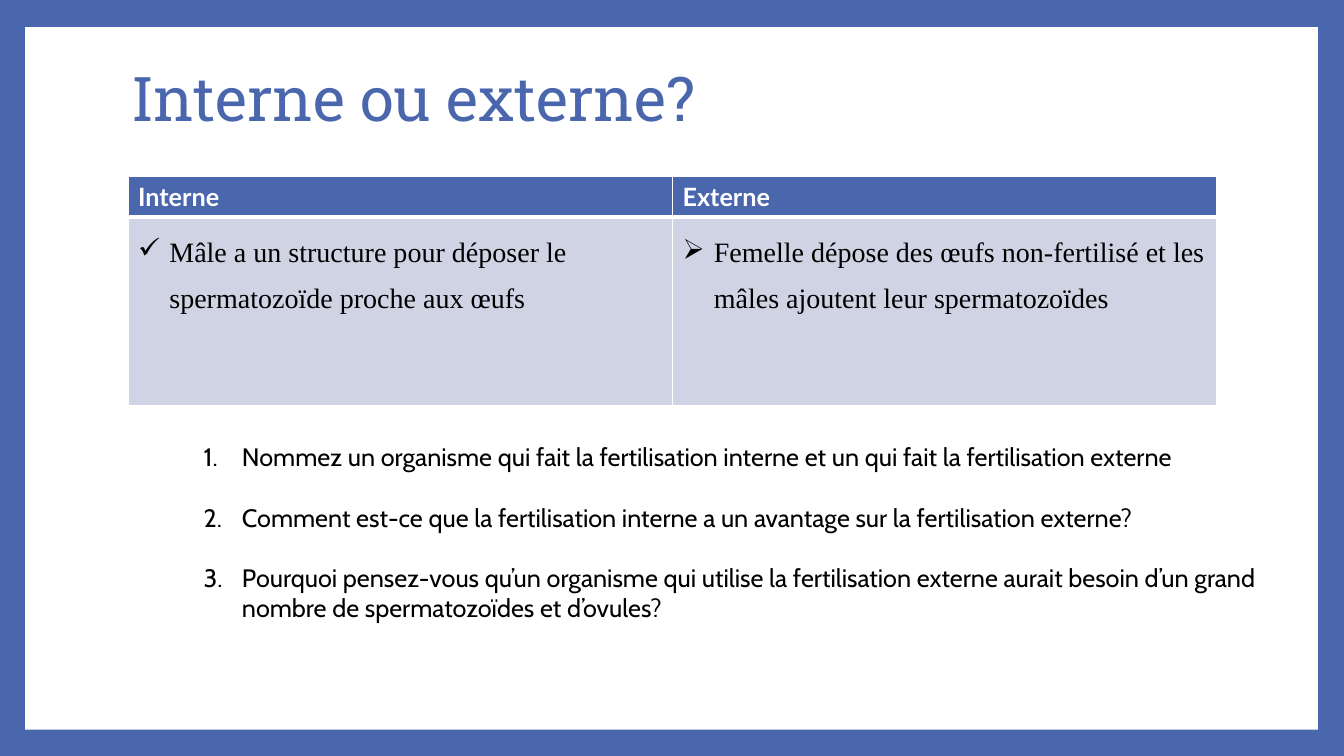
from lxml import etree
from pptx import Presentation
from pptx.dml.color import RGBColor
from pptx.enum.shapes import MSO_SHAPE
from pptx.enum.text import MSO_ANCHOR, MSO_AUTO_SIZE, PP_ALIGN
from pptx.oxml.ns import qn
from pptx.util import Inches, Pt

RECTANGLE = MSO_SHAPE.RECTANGLE
MIDDLE, TOP = MSO_ANCHOR.MIDDLE, MSO_ANCHOR.TOP
NO_AUTOFIT = MSO_AUTO_SIZE.NONE
LEFT = PP_ALIGN.LEFT

COLORS = {"blue": "4A66AC", "pale": "D0D3E3", "white": "FFFFFF", "black": "000000"}

TITLE = "Interne ou externe?"
FERTILISATION = [
    ("Interne", "✓", "Mâle a un structure pour déposer le spermatozoïde proche aux œufs"),
    ("Externe", "➢", "Femelle dépose des œufs non-fertilisé et les mâles ajoutent leur spermatozoïdes"),
]
QUESTIONS = [
    "Nommez un organisme qui fait la fertilisation interne et un qui fait la fertilisation externe",
    "Comment est-ce que la fertilisation interne a un avantage sur la fertilisation externe?",
    "Pourquoi pensez-vous qu’un organisme qui utilise la fertilisation externe aurait besoin "
    "d’un grand nombre de spermatozoïdes et d’ovules?",
]

PANEL_AREA = (0.25, 0.27, 12.82, 6.97)
TITLE_AREA = (1.2, 0.27, 10.8, 1.48)
TABLE_AREA = (1.27, 1.75, 10.8, 2.27)
QUESTIONS_AREA = (1.92, 4.33, 11.15, 1.92)
HEADER_HEIGHT = 0.4


def color(name):
    return RGBColor.from_string(COLORS[name])


def place(shape, area):
    shape.left, shape.top, shape.width, shape.height = map(Inches, area)


def style(para, font_name, size, color_name, bold=False):
    para.alignment = LEFT
    para.font.name = font_name
    para.font.size = Pt(size)
    para.font.bold = bold
    para.font.color.rgb = color(color_name)


def add_bullet(para, indent, tag, **attributes):
    properties = para._p.get_or_add_pPr()
    properties.set("marL", str(Inches(indent)))
    properties.set("indent", str(-Inches(indent)))
    etree.SubElement(properties, qn(tag), **attributes)


def fill_cell(cell, fill_name, bottom_width):
    """Draw white borders round the cell, then fill it."""
    properties = cell._tc.get_or_add_tcPr()
    for side, width in (("L", 1), ("R", 1), ("T", 1), ("B", bottom_width)):
        line = etree.SubElement(properties, qn(f"a:ln{side}"), w=str(Pt(width)))
        fill = etree.SubElement(line, qn("a:solidFill"))
        etree.SubElement(fill, qn("a:srgbClr"), val=COLORS["white"])
    cell.fill.solid()
    cell.fill.fore_color.rgb = color(fill_name)


def add_panel(slide):
    panel = slide.shapes.add_shape(RECTANGLE, *map(Inches, PANEL_AREA))
    panel.shadow.inherit = False
    panel.fill.solid()
    panel.fill.fore_color.rgb = color("white")
    panel.line.fill.background()
    slide.shapes.title.element.addprevious(panel.element)


def add_title(slide):
    title = slide.shapes.title
    place(title, TITLE_AREA)
    frame = title.text_frame
    frame.text = TITLE
    frame.auto_size = NO_AUTOFIT
    frame.vertical_anchor = MIDDLE
    para = frame.paragraphs[0]
    para.line_spacing = 0.9
    style(para, "Roboto Slab", 44, "blue")


def add_comparison(slide):
    frame = slide.shapes.add_table(2, len(FERTILISATION), *map(Inches, TABLE_AREA))
    table = frame.table
    table.horz_banding = False
    table.rows[0].height = Inches(HEADER_HEIGHT)
    table.rows[1].height = Inches(TABLE_AREA[3] - HEADER_HEIGHT)
    for column, (heading, mark, description) in enumerate(FERTILISATION):
        header, body = table.cell(0, column), table.cell(1, column)
        header.text, body.text = heading, description
        fill_cell(header, "blue", 3)
        fill_cell(body, "pale", 1)
        style(header.text_frame.paragraphs[0], "Lato", 18, "white", bold=True)
        para = body.text_frame.paragraphs[0]
        para.line_spacing = 1.5
        add_bullet(para, 0.31, "a:buChar", char=mark)
        style(para, "Times New Roman", 20, "black")


def add_questions(slide):
    body = slide.placeholders[1]
    place(body, QUESTIONS_AREA)
    frame = body.text_frame
    frame.text = "\n".join(QUESTIONS)
    frame.auto_size = NO_AUTOFIT
    frame.vertical_anchor = TOP
    for index, para in enumerate(frame.paragraphs):
        para.space_before = Pt(21.5 if index else 0)
        add_bullet(para, 0.38, "a:buAutoNum", type="arabicPeriod")
        style(para, "Cabin", 18, "black")


def main():
    deck = Presentation()
    deck.slide_width, deck.slide_height = Inches(13.33), Inches(7.5)
    slide = deck.slides.add_slide(deck.slide_layouts[1])
    slide.background.fill.solid()
    slide.background.fill.fore_color.rgb = color("blue")
    add_panel(slide)
    add_title(slide)
    add_comparison(slide)
    add_questions(slide)
    deck.save("out.pptx")


if __name__ == "__main__":
    main()
